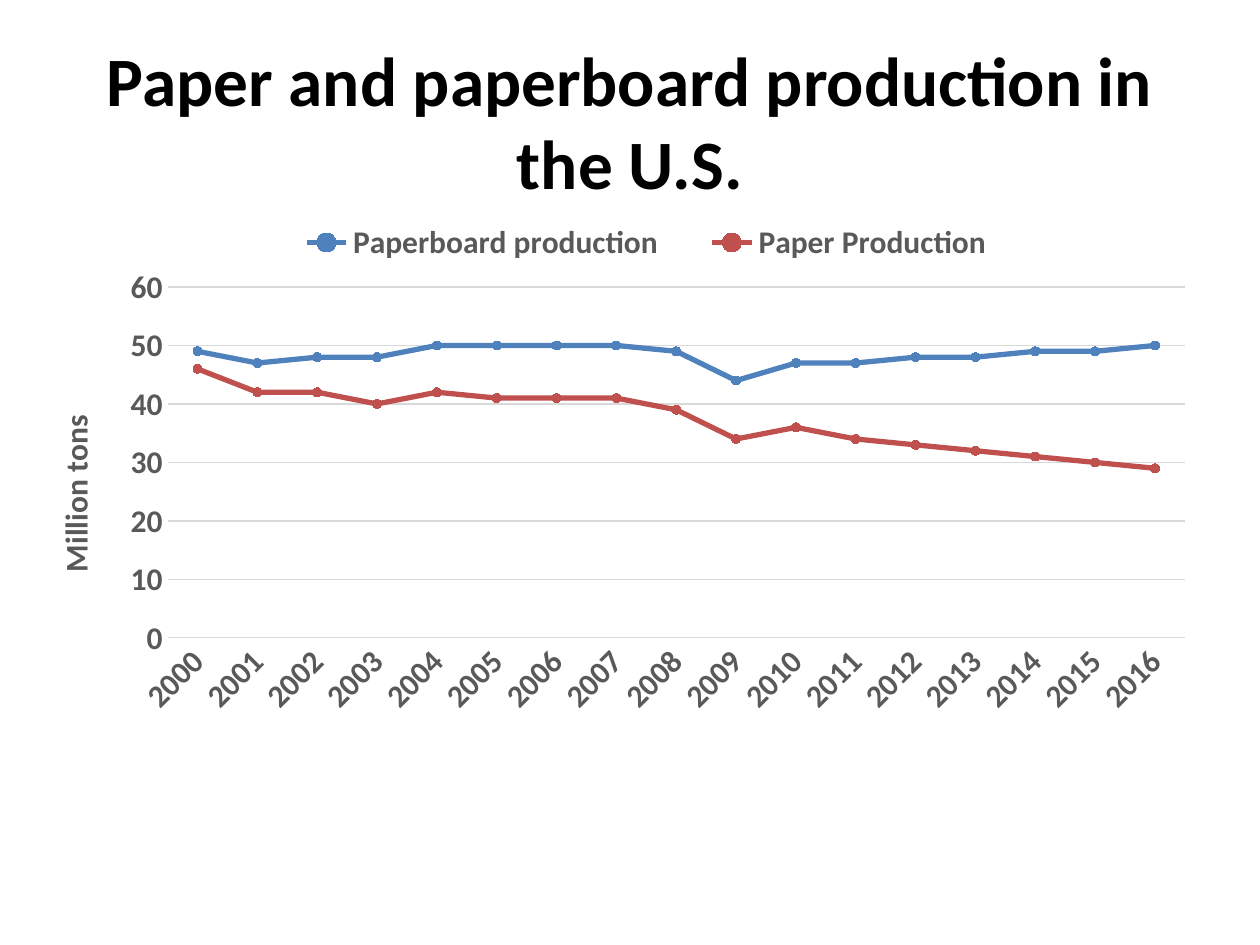
from lxml.etree import SubElement
from pptx import Presentation
from pptx.chart.data import CategoryChartData
from pptx.dml.color import RGBColor
from pptx.enum.chart import XL_CHART_TYPE, XL_LEGEND_POSITION, XL_MARKER_STYLE, XL_TICK_MARK
from pptx.enum.text import MSO_ANCHOR, PP_ALIGN
from pptx.oxml.ns import qn
from pptx.util import Emu, Pt

PX = 914400 // 126
GREY, GRID = "595959", "D9D9D9"


def style_font(font, size, color):
    font.name, font.size, font.bold = "Calibri", Pt(size), True
    font.color.rgb = RGBColor.from_string(color)


def place(element, index, **settings):
    """Give a chart part a manual layout, in fractions of the chart."""
    for old in element.findall(qn("c:layout")):
        element.remove(old)
    layout = SubElement(element, qn("c:layout"))
    element.insert(index, layout)
    manual = SubElement(layout, qn("c:manualLayout"))
    for tag, value in settings.items():
        SubElement(manual, qn("c:" + tag)).set("val", str(value))


prs = Presentation()
prs.slide_width, prs.slide_height = Emu(1260 * PX), Emu(945 * PX)
slide = prs.slides.add_slide(prs.slide_layouts[6])

# Production data, million tons
production = CategoryChartData(number_format="#,##0")
production.categories = [str(year) for year in range(2000, 2017)]
production.add_series("Paperboard production", [
    49, 47, 48, 48, 50, 50, 50, 50, 49, 44, 47, 47, 48, 48, 49, 49, 50])
production.add_series("Paper Production", [
    46, 42, 42, 40, 42, 41, 41, 41, 39, 34, 36, 34, 33, 32, 31, 30, 29])

# Line chart
chart = slide.shapes.add_chart(
    XL_CHART_TYPE.LINE_MARKERS, 0, 198 * PX, 1197 * PX, 557 * PX, production).chart
style_font(chart.font, 18, "000000")
chart.has_title = False
plot = chart.plots[0]
plot.vary_by_categories = False
for series, color in zip(plot.series, ("4F81BD", "C0504D")):
    rgb = RGBColor.from_string(color)
    series.smooth = False
    series.format.line.color.rgb = rgb
    series.format.line.width = Pt(3)
    series.marker.style, series.marker.size = XL_MARKER_STYLE.CIRCLE, 5
    series.marker.format.fill.solid()
    series.marker.format.fill.fore_color.rgb = rgb
    series.marker.format.line.color.rgb = rgb
place(chart._chartSpace.chart.plotArea, 0, layoutTarget="inner", xMode="edge", yMode="edge",
      x=0.14, y=0.16, w=0.85, h=0.63)

# Axes
years, tons = chart.category_axis, chart.value_axis
for axis in (years, tons):
    axis.major_tick_mark = axis.minor_tick_mark = XL_TICK_MARK.NONE
    style_font(axis.tick_labels.font, 18, GREY)
years._element.txPr.find(qn("a:bodyPr")).set("rot", "-2700000")
tons.minimum_scale, tons.maximum_scale, tons.major_unit = 0, 60, 10
tons.format.line.fill.background()
for line in (years.format.line, tons.major_gridlines.format.line):
    line.color.rgb = RGBColor.from_string(GRID)
    line.width = Pt(0.75)

# Value axis title
unit = tons.axis_title
unit.text_frame.text = "Million tons"
style_font(unit.text_frame.paragraphs[0].runs[0].font, 18, GREY)
unit.text_frame._txBody.find(qn("a:bodyPr")).set("rot", "-5400000")
place(unit._element, 1, xMode="edge", yMode="edge", x=0.04, y=0.38)

# Legend above the plot
chart.has_legend = True
legend = chart.legend
legend.position = XL_LEGEND_POSITION.BOTTOM
legend.include_in_layout = False
style_font(legend.font, 18, GREY)
place(legend._element, 1, xMode="edge", yMode="edge", x=0.22, y=0.03, w=0.64, h=0.1)

# Slide title
heading = slide.shapes.add_textbox(63 * PX, 42 * PX, 1134 * PX, 157 * PX).text_frame
heading.word_wrap = True
heading.vertical_anchor = MSO_ANCHOR.MIDDLE
heading.text = "Paper and paperboard production in the U.S."
heading.paragraphs[0].alignment = PP_ALIGN.CENTER
style_font(heading.paragraphs[0].runs[0].font, 39.6, "000000")

prs.save("out.pptx")
